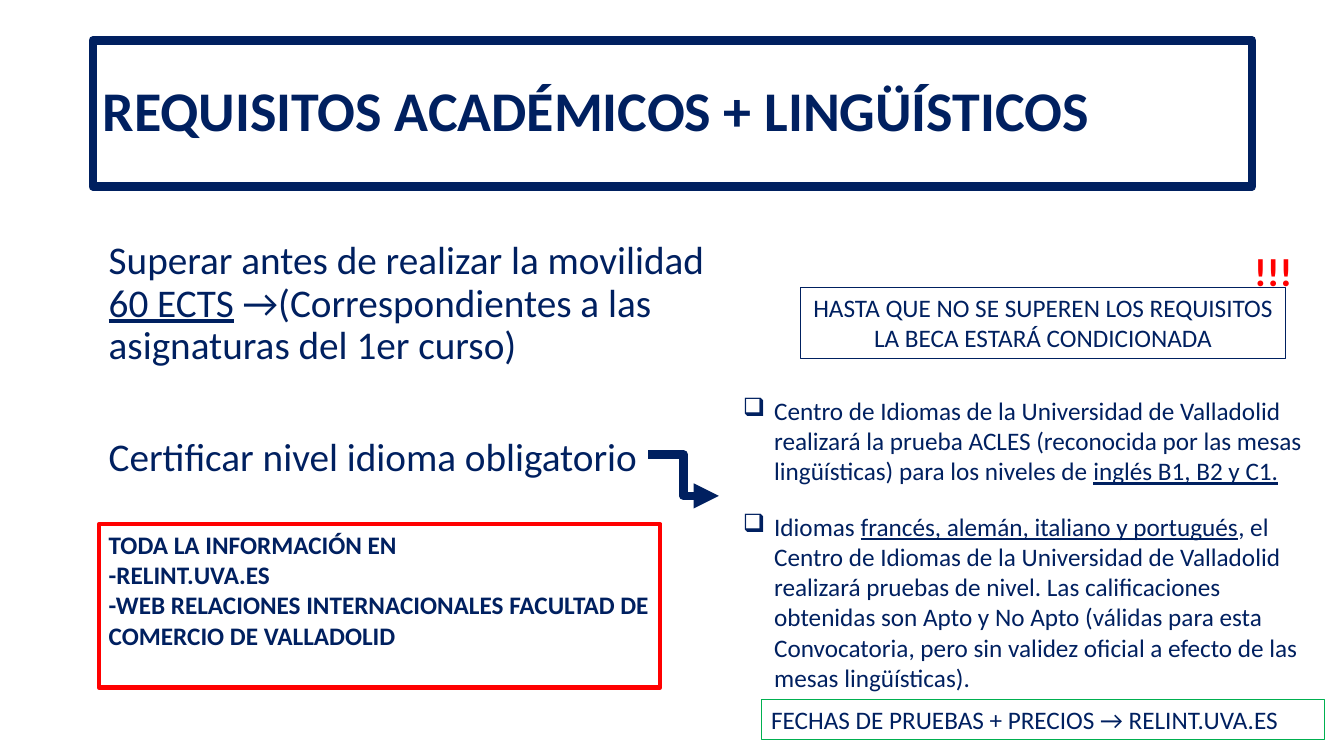
from lxml import etree
from pptx import Presentation
from pptx.dml.color import RGBColor
from pptx.enum.shapes import MSO_CONNECTOR
from pptx.enum.text import MSO_ANCHOR, PP_ALIGN
from pptx.oxml.ns import qn
from pptx.util import Inches, Pt

NAVY = RGBColor(0x00, 0x20, 0x60)
RED = RGBColor(0xFF, 0x00, 0x00)
GREEN = RGBColor(0x00, 0xB0, 0x50)
ELBOW = MSO_CONNECTOR.ELBOW
MIDDLE = MSO_ANCHOR.MIDDLE
CENTER = PP_ALIGN.CENTER
FONT = "Calibri"
HANG = Inches(0.31)


def add_box(slide, left, top, width, height, edge=None, weight=0.75):
    """Add a wrapping text box with an optional outline; return its frame."""
    box = slide.shapes.add_textbox(
        Inches(left), Inches(top), Inches(width), Inches(height))
    if edge is not None:
        box.line.color.rgb = edge
        box.line.width = Pt(weight)
    frame = box.text_frame
    frame.word_wrap = True
    return frame


def add_run(para, text, size=18, color=NAVY, bold=False, under=False):
    """Add one styled run."""
    run = para.add_run()
    run.text = text
    font = run.font
    font.name = FONT
    font.size = Pt(size)
    font.color.rgb = color
    font.bold = bold
    font.underline = under


def add_item(slide, top, height, parts):
    """Add a bulleted note from pairs of text and underline."""
    para = add_box(slide, 7.27, top, 5.95, height).paragraphs[0]
    props = para._p.get_or_add_pPr()
    props.set("marL", str(HANG))
    props.set("indent", str(-HANG))
    etree.SubElement(props, qn("a:buChar")).set("char", "❑")
    for text, under in parts:
        add_run(para, text, under=under)


def add_title(slide):
    """Add the framed title."""
    frame = add_box(slide, 0.92, 0.4, 11.5, 1.45, NAVY, 6)
    frame.vertical_anchor = MIDDLE
    para = frame.paragraphs[0]
    para.line_spacing = 0.9
    add_run(para, "REQUISITOS ACADÉMICOS + LINGÜÍSTICOS", 40, bold=True)


def add_body(slide):
    """Add the two main requirements."""
    frame = add_box(slide, 0.98, 2.34, 6.15, 2.6)
    first, last = frame.paragraphs[0], frame.add_paragraph()
    for para in (first, last):
        para.line_spacing = 0.9
    last.space_before = Pt(50)
    add_run(first, "Superar antes de realizar la movilidad ", 28)
    add_run(first, "60 ECTS", 28, under=True)
    add_run(first, " →(Correspondientes a las asignaturas del 1er curso)", 28)
    add_run(last, "Certificar nivel idioma obligatorio", 28)


def add_info(slide):
    """Add the red box that lists where to read more."""
    frame = add_box(slide, 0.98, 5.2, 5.57, 1.62, RED, 3)
    lines = ("TODA LA INFORMACIÓN EN", "-RELINT.UVA.ES",
             "-WEB RELACIONES INTERNACIONALES FACULTAD DE COMERCIO DE VALLADOLID")
    for i, text in enumerate(lines):
        para = frame.add_paragraph() if i else frame.paragraphs[0]
        add_run(para, text, bold=True)


def add_arrow(slide, left, top, right, low):
    """Add the bent arrow towards the language notes."""
    arrow = slide.shapes.add_connector(
        ELBOW, Inches(left), Inches(top), Inches(right), Inches(low))
    arrow.line.color.rgb = NAVY
    arrow.line.width = Pt(6)
    line = arrow.line._get_or_add_ln()
    etree.SubElement(line, qn("a:tailEnd")).set("type", "triangle")
    etree.SubElement(arrow._element.spPr, qn("a:effectLst"))


def main():
    """Build the slide and save it."""
    deck = Presentation()
    deck.slide_width, deck.slide_height = Inches(13.33), Inches(7.5)
    slide = deck.slides.add_slide(deck.slide_layouts[6])

    add_title(slide)
    add_body(slide)

    alert = add_box(slide, 7.94, 2.85, 4.81, 0.71, NAVY).paragraphs[0]
    alert.alignment = CENTER
    add_run(alert, "HASTA QUE NO SE SUPEREN LOS REQUISITOS "
                   "LA BECA ESTARÁ CONDICIONADA")
    marks = add_box(slide, 12.34, 2.4, 0.9, 0.57).paragraphs[0]
    add_run(marks, "!!!", 28, RED, bold=True)

    add_item(slide, 3.87, 1.31, (
        ("Centro de Idiomas de la Universidad de Valladolid realizará la "
         "prueba ACLES (reconocida por las mesas lingüísticas) para los "
         "niveles de ", False),
        ("inglés B1, B2 y C1.", True)))
    add_item(slide, 5.02, 1.92, (
        ("Idiomas ", False),
        ("francés, alemán, italiano y portugués", True),
        (", el Centro de Idiomas de la Universidad de Valladolid realizará "
         "pruebas de nivel. Las calificaciones obtenidas son Apto y No Apto "
         "(válidas para esta Convocatoria, pero sin validez oficial a efecto "
         "de las mesas lingüísticas).", False)))

    add_arrow(slide, 6.43, 4.51, 7.13, 4.92)
    add_info(slide)
    dates = add_box(slide, 7.55, 6.94, 5.59, 0.4, GREEN).paragraphs[0]
    add_run(dates, "FECHAS DE PRUEBAS + PRECIOS → RELINT.UVA.ES")

    deck.save("out.pptx")


if __name__ == "__main__":
    main()
